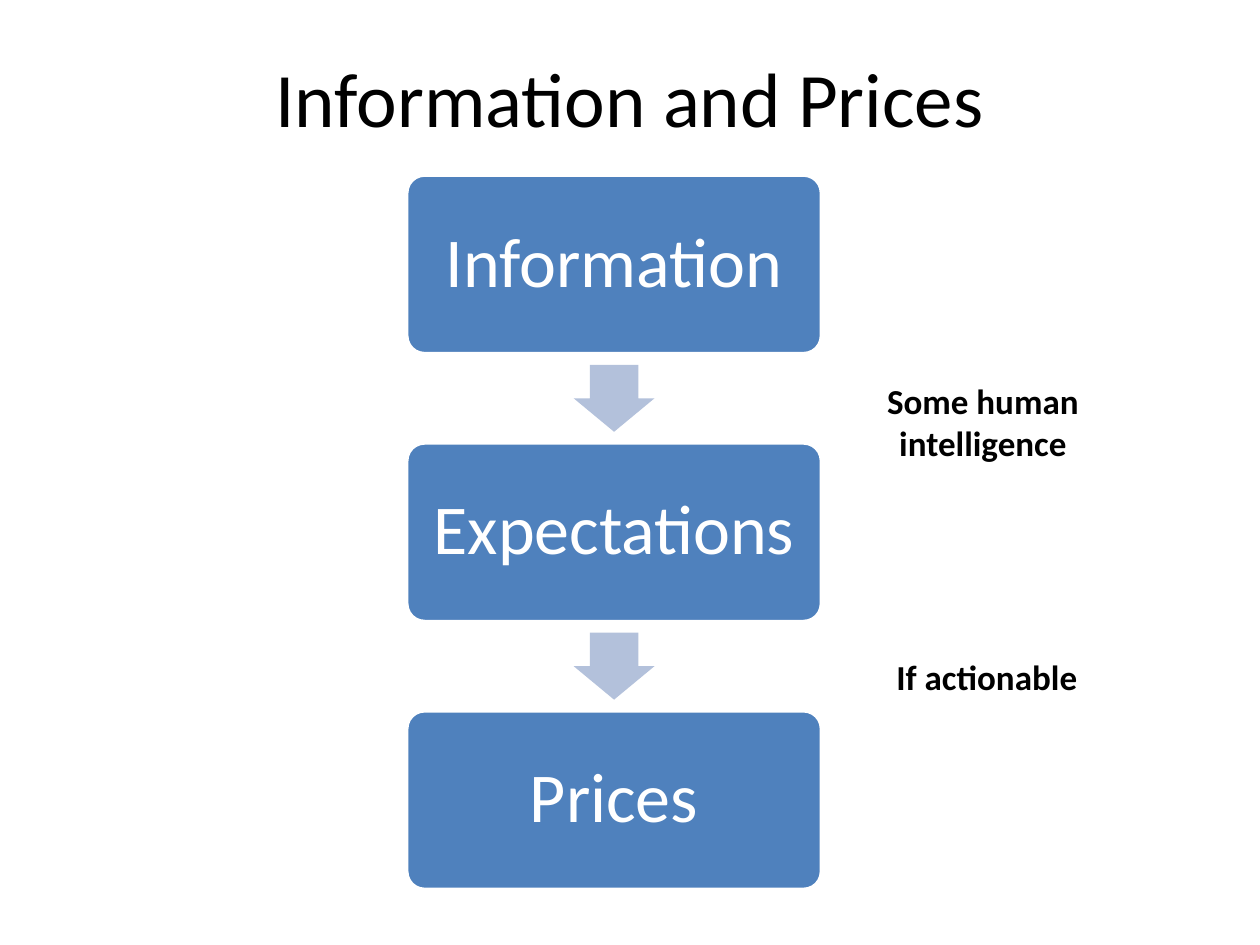
from pptx import Presentation
from pptx.dml.color import RGBColor as RGB
from pptx.enum.shapes import MSO_SHAPE as Kind
from pptx.enum.text import MSO_ANCHOR as Anchor, MSO_AUTO_SIZE as Fit, PP_ALIGN as Align
from pptx.util import Cm, Pt

HUES = {"box": "4F81BD", "arrow": "B3C1DB", "light": "FFFFFF", "dark": "000000"}


def hue(name):
    return RGB.from_string(HUES[name])


def write(frame, text, size, color, bold=False):
    frame.word_wrap = True
    frame.text = text
    para = frame.paragraphs[0]
    para.alignment = Align.CENTER
    font = para.font
    font.name, font.size, font.bold = "Calibri", Pt(size), bold
    font.color.rgb = hue(color)
    return para


deck = Presentation()
deck.slide_width, deck.slide_height = Cm(25.4), Cm(19.05)
slide = deck.slides.add_slide(deck.slide_layouts[5])
shapes = slide.shapes

title = shapes.title
title.left, title.top, title.width, title.height = Cm(1.27), Cm(0.76), Cm(22.86), Cm(2.36)
title.text_frame.vertical_anchor = Anchor.MIDDLE
write(title.text_frame, "Information and Prices", 44, "dark")

left, top, wide, high, pitch = 8.2, 3.53, 8.36, 3.6, 5.4
head, drop = 1.63, 1.35
steps = ["Information", "Expectations", "Prices"]
for i, step in enumerate(steps):
    y = top + i * pitch
    if i:
        mid = y - (pitch - high) / 2
        arrow = shapes.add_shape(Kind.DOWN_ARROW, Cm(left + (wide - head) / 2),
                                 Cm(mid - drop / 2), Cm(head), Cm(drop))
        arrow.adjustments[0], arrow.adjustments[1] = 0.6, 0.5
        arrow.shadow.inherit = False
        arrow.fill.solid()
        arrow.fill.fore_color.rgb = hue("arrow")
        arrow.line.fill.background()
    box = shapes.add_shape(Kind.ROUNDED_RECTANGLE, Cm(left), Cm(y), Cm(wide), Cm(high))
    box.adjustments[0] = 0.1
    box.shadow.inherit = False
    box.fill.solid()
    box.fill.fore_color.rgb = hue("box")
    box.line.color.rgb = hue("light")
    box.line.width = Pt(2)
    frame = box.text_frame
    frame.vertical_anchor = Anchor.MIDDLE
    frame.margin_left = frame.margin_right = Cm(0.3)
    frame.margin_top = frame.margin_bottom = Cm(0.43)
    write(frame, step, 40, "light").line_spacing = 0.9

notes = [
    ("Some human intelligence", 16.92, 7.52, 5.79, 1.96),
    ("If actionable", 17.09, 13.08, 5.61, 1.12),
]
for text, *spot in notes:
    note = shapes.add_textbox(*map(Cm, spot))
    write(note.text_frame, text, 20, "dark", True)
    note.text_frame.auto_size = Fit.SHAPE_TO_FIT_TEXT

deck.save("out.pptx")
